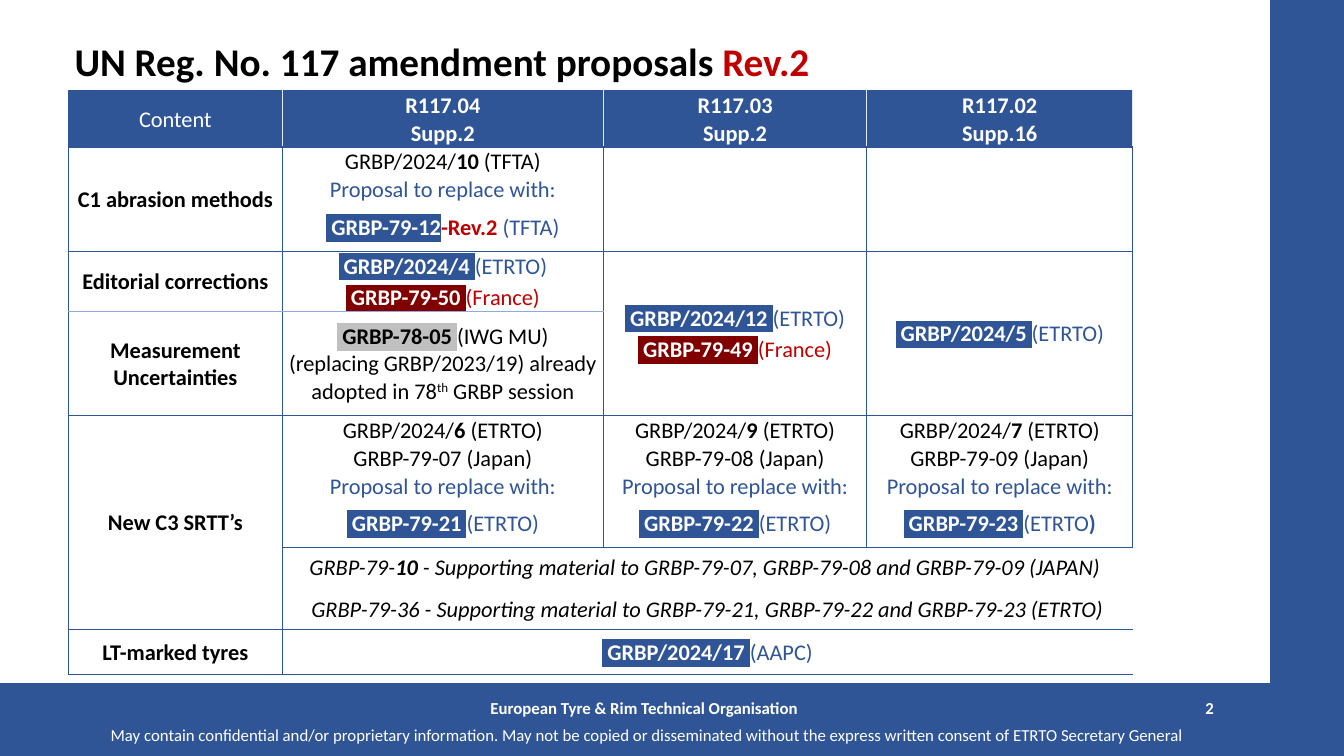
from dataclasses import dataclass
from itertools import product

from lxml.etree import SubElement
from pptx import Presentation
from pptx.dml.color import RGBColor
from pptx.enum.shapes import MSO_SHAPE as Shape
from pptx.enum.text import MSO_ANCHOR as Anchor, PP_ALIGN as Align
from pptx.oxml.ns import qn
from pptx.util import Cm, Pt


@dataclass(frozen=True)
class Theme:
    """Colours and type sizes of the slide."""
    font: str = "Calibri"
    title: int = 28
    body: int = 16
    footer: int = 12
    blue: str = "2F5597"
    soft: str = "8FAADC"
    pale: str = "DEEBF7"
    red: str = "C00000"
    maroon: str = "800000"
    grey: str = "C0C0C0"
    white: str = "FFFFFF"
    black: str = "000000"


@dataclass(frozen=True)
class Ink:
    """Look of one stretch of text."""
    color: str
    bold: bool = False
    italic: bool = False
    highlight: str = ""
    baseline: int = 0


THEME = Theme()
PLAIN, STRONG = Ink(THEME.black), Ink(THEME.black, bold=True)
ITALIC, STRONG_ITALIC = Ink(THEME.black, italic=True), Ink(THEME.black, True, True)
RAISED = Ink(THEME.black, baseline=30000)
BLUE = Ink(THEME.blue)
RED = Ink(THEME.red)
BLUE_BOLD, RED_BOLD = Ink(THEME.blue, bold=True), Ink(THEME.red, bold=True)
WHITE, WHITE_BOLD = Ink(THEME.white), Ink(THEME.white, bold=True)
BLUE_TAG = Ink(THEME.white, bold=True, highlight=THEME.blue)
RED_TAG = Ink(THEME.white, bold=True, highlight=THEME.maroon)
GREY_TAG = Ink(THEME.black, bold=True, highlight=THEME.grey)

REPLACE = [("Proposal to replace with:", BLUE)]
COLUMNS = (5.38, 8.1, 6.63, 6.71)
ROWS = (0.7, 0.7, 0.7, 0.7, 1.22, 1.51, 2.62, 0.7, 0.7, 0.7, 1.19, 1.04, 1.04, 1.14)
GROUP_EDGES = {0, 2, 5, 6, 7, 11, 13, 14}
HEADER_ROWS = 2
SOFT_EDGE = 6
SPANS = {(0, 0): (2, 1), (2, 0): (3, 1), (2, 2): (3, 1), (2, 3): (3, 1),
         (5, 2): (2, 1), (5, 3): (2, 1), (7, 0): (6, 1),
         (11, 1): (1, 3), (12, 1): (1, 3), (13, 1): (1, 3)}


def proposal(document, author):
    """Return the runs of a proposal that is still open."""
    return [(f" {document} ", BLUE_TAG), (f"({author})", BLUE)]


def objection(document):
    """Return the runs of a French proposal."""
    return [(f" {document} ", RED_TAG), ("(France)", RED)]


def superseded(number, author):
    """Return the runs of a document that is to be replaced."""
    return [("GRBP/2024/", PLAIN), (number, STRONG), (f" ({author})", PLAIN)]


def table_content():
    """Return the paragraphs of each filled cell by row and column."""
    content = {
        (0, 0): [[("Content", WHITE)]],
        (2, 1): [superseded("10", "TFTA")],
        (3, 1): [REPLACE],
        (4, 1): [[(" GRBP-79-12", BLUE_TAG), ("-Rev.2 ", RED_BOLD), ("(TFTA)", BLUE)]],
        (5, 1): [proposal("GRBP/2024/4", "ETRTO"), objection("GRBP-79-50")],
        (5, 2): [proposal("GRBP/2024/12", "ETRTO"), objection("GRBP-79-49")],
        (5, 3): [proposal("GRBP/2024/5", "ETRTO")],
        (6, 1): [[(" GRBP-78-05 ", GREY_TAG),
                  ("(IWG MU)\n(replacing GRBP/2023/19) already adopted in 78", PLAIN),
                  ("th", RAISED), (" GRBP session", PLAIN)]],
        (11, 1): [[("GRBP-79-", ITALIC), ("10", STRONG_ITALIC),
                   (" - Supporting material to GRBP-79-07, GRBP-79-08 and GRBP-79-09 (JAPAN) ", ITALIC)]],
        (12, 1): [[("GRBP-79-36 - Supporting material to GRBP-79-21, GRBP-79-22 and GRBP-79-23 (ETRTO)",
                    ITALIC)]],
        (13, 1): [proposal("GRBP/2024/17", "AAPC")],
    }
    labels = {2: "C1 abrasion methods", 5: "Editorial corrections",
              6: "Measurement Uncertainties", 7: "New C3 SRTT’s", 13: "LT-marked tyres"}
    for row, label in labels.items():
        content[row, 0] = [[(label, STRONG)]]
    versions = (("R117.04", "Supp.2", "6", "07", "21"),
                ("R117.03", "Supp.2", "9", "08", "22"),
                ("R117.02", "Supp.16", "7", "09", "23"))
    for column, (version, supplement, old, japan, new) in enumerate(versions, 1):
        content[0, column] = [[(version, WHITE_BOLD)]]
        content[1, column] = [[(supplement, WHITE_BOLD)]]
        content[7, column] = [superseded(old, "ETRTO")]
        content[8, column] = [[(f"GRBP-79-{japan} (Japan)", PLAIN)]]
        content[9, column] = [REPLACE]
        content[10, column] = [proposal(f"GRBP-79-{new}", "ETRTO")]
    content[10, 3][0][1:] = [("(ETRTO", BLUE), (")", BLUE_BOLD)]
    return content


class SlideBuilder:
    """Draws styled elements on the current slide."""

    def __init__(self, slide, theme):
        self.slide, self.theme = slide, theme

    def style(self, target, formats):
        """Set each attribute named in the formats."""
        for name, value in formats.items():
            setattr(target, name, value)

    def band(self, left, top, width, height, rotation=0):
        """Add a solid blue bar."""
        shape = self.slide.shapes.add_shape(Shape.RECTANGLE, *map(Cm, (left, top, width, height)))
        shape.rotation = rotation
        shape.shadow.inherit = False
        color = RGBColor.from_string(self.theme.blue)
        shape.fill.solid()
        shape.fill.fore_color.rgb = shape.line.color.rgb = color
        shape.line.width = Pt(1)

    def add_runs(self, paragraph, runs, size, **formats):
        """Fill a paragraph with styled runs."""
        self.style(paragraph, formats)
        for text, ink in runs:
            for index, line in enumerate(text.split("\n")):
                if index:
                    paragraph.add_line_break()
                run = paragraph.add_run()
                run.text = line
                self.style(run.font, {"name": self.theme.font, "size": Pt(size),
                                      "bold": ink.bold, "italic": ink.italic})
                run.font.color.rgb = RGBColor.from_string(ink.color)
                properties = run._r.get_or_add_rPr()
                if ink.baseline:
                    properties.set("baseline", str(ink.baseline))
                if ink.highlight:
                    highlight = SubElement(properties, qn("a:highlight"))
                    SubElement(highlight, qn("a:srgbClr"), val=ink.highlight)
                    properties.find(qn("a:solidFill")).addnext(highlight)

    def text(self, box, runs, size, **formats):
        """Add a one-paragraph text box."""
        frame = self.slide.shapes.add_textbox(*map(Cm, box)).text_frame
        self.style(frame, {"word_wrap": True, "vertical_anchor": Anchor.MIDDLE})
        self.add_runs(frame.paragraphs[0], runs, size, **formats)

    def border(self, cell, side, color, points):
        """Draw one cell edge, or clear it when there is no colour."""
        line = SubElement(cell._tc.get_or_add_tcPr(), qn(f"a:ln{side}"), w=str(int(Pt(points))))
        if color:
            SubElement(SubElement(line, qn("a:solidFill")), qn("a:srgbClr"), val=color)
        else:
            SubElement(line, qn("a:noFill"))

    def frame_cell(self, cell, row, column, block):
        """Draw the edges of a cell that lie on the rim of its block."""
        top, left, bottom, right = block
        for side, edge, rim in (("L", column, left), ("R", column + 1, right)):
            color = self.theme.pale if row < HEADER_ROWS and edge else self.theme.blue
            self.border(cell, side, color if edge == rim else None, 1)
        for side, edge, rim in (("T", row, top), ("B", row + 1, bottom)):
            soft = edge == SOFT_EDGE
            color = self.theme.soft if soft else self.theme.blue
            self.border(cell, side, color if edge == rim and edge in GROUP_EDGES else None,
                        0.5 if soft else 1)

    def fill_cell(self, cell, paragraphs, row, column):
        """Set the fill and the text of a cell."""
        self.style(cell, {"vertical_anchor": Anchor.MIDDLE, "margin_left": Cm(0.03),
                          "margin_right": Cm(0.03), "margin_top": Cm(0.03), "margin_bottom": 0})
        if row < HEADER_ROWS:
            cell.fill.solid()
            cell.fill.fore_color.rgb = RGBColor.from_string(self.theme.blue)
        else:
            cell.fill.background()
        frame = cell.text_frame
        if not paragraphs:
            SubElement(frame.paragraphs[0]._p, qn("a:endParaRPr"), sz=str(self.theme.body * 100))
        space = Pt(0 if row < HEADER_ROWS or column == 0 else 6 if row == SOFT_EDGE else 3)
        for index, runs in enumerate(paragraphs):
            paragraph = frame.add_paragraph() if index else frame.paragraphs[0]
            self.add_runs(paragraph, runs, self.theme.body, alignment=Align.CENTER, space_after=space)

    def table(self, left, top, content):
        """Add the table of amendment proposals."""
        size = map(Cm, (left, top, sum(COLUMNS), sum(ROWS)))
        table = self.slide.shapes.add_table(len(ROWS), len(COLUMNS), *size).table
        self.style(table, {"first_row": False, "horz_banding": False})
        for column, width in zip(table.columns, COLUMNS):
            column.width = Cm(width)
        for row, height in zip(table.rows, ROWS):
            row.height = Cm(height)
        blocks = {}
        for row, column in product(range(len(ROWS)), range(len(COLUMNS))):
            rows, columns = SPANS.get((row, column), (1, 1))
            for spot in product(range(row, row + rows), range(column, column + columns)):
                blocks.setdefault(spot, (row, column, row + rows, column + columns))
        for (row, column), block in blocks.items():
            cell = table.cell(row, column)
            self.frame_cell(cell, row, column, block)
            self.fill_cell(cell, content.get((row, column), []), row, column)
        for (row, column), (rows, columns) in SPANS.items():
            table.cell(row, column).merge(table.cell(row + rows - 1, column + columns - 1))


def main():
    """Build and save the presentation."""
    presentation = Presentation()
    presentation.slide_width, presentation.slide_height = Cm(33.87), Cm(19.05)
    builder = SlideBuilder(presentation.slides.add_slide(presentation.slide_layouts[6]), THEME)
    builder.band(0, 17.22, 33.83, 1.83)
    builder.band(23.42, 8.61, 19.05, 1.83, rotation=90)
    builder.text((2.54, 18.31, 28.78, 0.43), [(
        "May contain confidential and/or proprietary information. May not be copied or disseminated "
        "without the express written consent of ETRTO Secretary General", WHITE)], THEME.footer)
    builder.text((10.52, 17.32, 11.43, 1.02), [("European Tyre & Rim Technical Organisation", WHITE_BOLD)],
                 THEME.footer, alignment=Align.CENTER)
    builder.text((23.22, 17.32, 7.62, 1.02), [("2", WHITE_BOLD)], THEME.footer, alignment=Align.RIGHT)
    builder.table(1.73, 2.29, table_content())
    builder.text((1.63, 0.48, 29.21, 2.26), [("UN Reg. No. 117 amendment proposals ", STRONG),
                                             ("Rev.2", RED_BOLD)], THEME.title, line_spacing=0.9)
    presentation.save("out.pptx")


if __name__ == "__main__":
    main()
